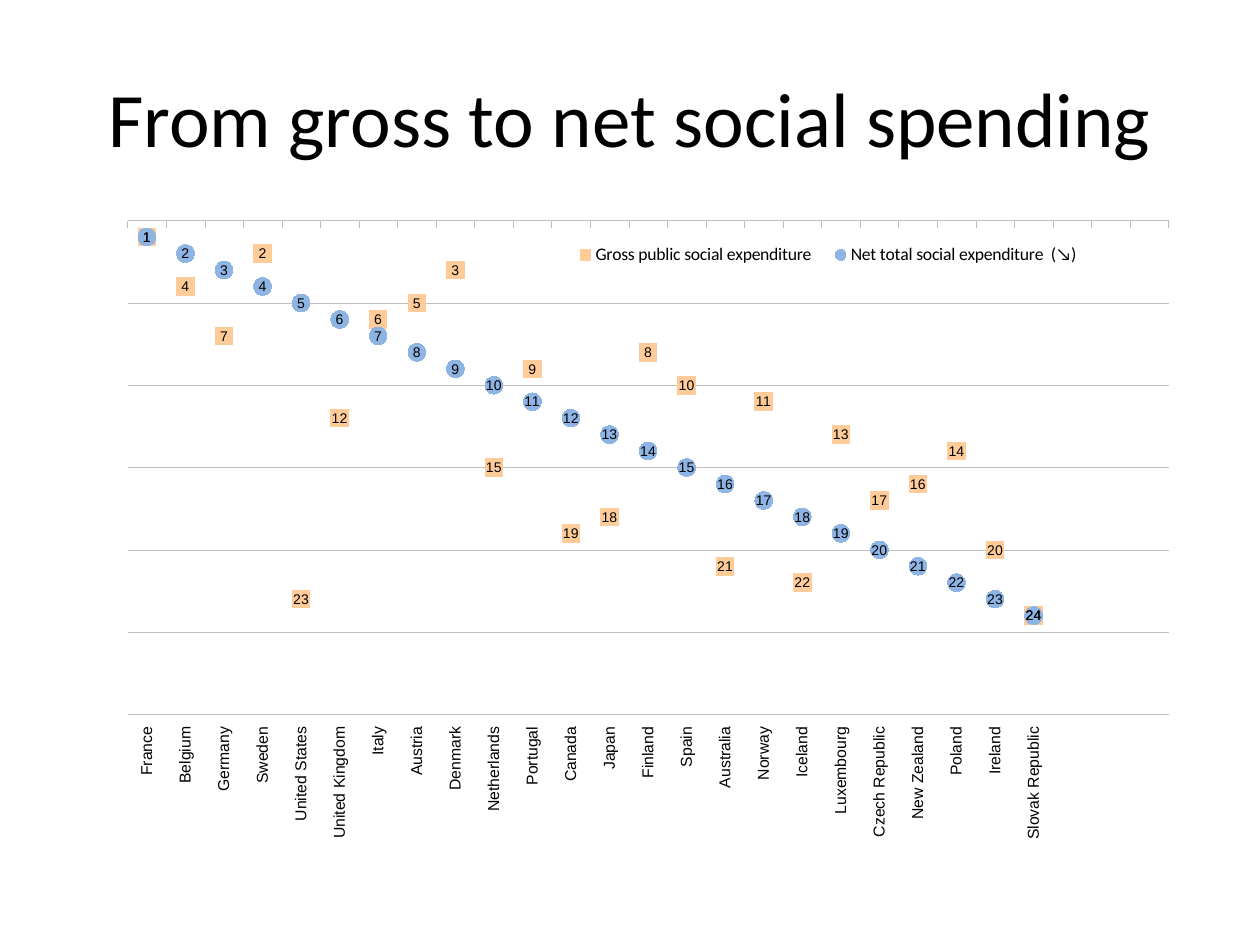
from dataclasses import dataclass

from lxml import etree
from pptx import Presentation
from pptx.chart.data import CategoryChartData
from pptx.dml.color import RGBColor
from pptx.enum.chart import (XL_CHART_TYPE, XL_LABEL_POSITION, XL_LEGEND_POSITION,
                             XL_MARKER_STYLE, XL_TICK_LABEL_POSITION, XL_TICK_MARK)
from pptx.enum.text import MSO_ANCHOR, PP_ALIGN
from pptx.oxml.ns import qn
from pptx.util import Inches, Pt

LINE_MARKERS = XL_CHART_TYPE.LINE_MARKERS
CENTERED = XL_LABEL_POSITION.CENTER
SQUARE, CIRCLE = XL_MARKER_STYLE.SQUARE, XL_MARKER_STYLE.CIRCLE
TICK_INSIDE, TICK_NONE = XL_TICK_MARK.INSIDE, XL_TICK_MARK.NONE

# Content: countries in order of net spending, with their gross rank
TITLE = "From gross to net social spending"
GROSS_RANKS = [
    ("France", 1), ("Belgium", 4), ("Germany", 7), ("Sweden", 2),
    ("United States", 23), ("United Kingdom", 12), ("Italy", 6), ("Austria", 5),
    ("Denmark", 3), ("Netherlands", 15), ("Portugal", 9), ("Canada", 19),
    ("Japan", 18), ("Finland", 8), ("Spain", 10), ("Australia", 21),
    ("Norway", 11), ("Iceland", 22), ("Luxembourg", 13), ("Czech Republic", 17),
    ("New Zealand", 16), ("Poland", 14), ("Ireland", 20), ("Slovak Republic", 24),
]
GROSS_NAME = "Gross public social expenditure"
NET_NAME = "Net total social expenditure  (↘)"
SPARE_COLUMNS = 3
LOWEST_RANK, RANK_STEP = 30, 5


@dataclass(frozen=True)
class Theme:
    text: RGBColor = RGBColor(0, 0, 0)
    rule: RGBColor = RGBColor(0xC0, 0xC0, 0xC0)
    gross: RGBColor = RGBColor(0xFF, 0xCC, 0x99)
    net: RGBColor = RGBColor(0x8E, 0xB4, 0xE3)
    heading_font: str = "Calibri"
    chart_font: str = "Arial"
    title_size: float = 44
    legend_size: float = 10.1
    country_size: float = 9
    rank_size: float = 8
    marker_size: int = 10
    rule_width: float = 0.25


THEME = Theme()

# Layout: inches on the slide, shares of the chart inside it
TITLE_BOX = (0.5, 0.3, 9, 1.25)
CHART_BOX = (0.5, 1.75, 9, 4.95)
PLOT_SHARE = (0.057, 0, 0.918, 0.792)
LEGEND_SHARE = (0.44, 0.02, 0.47, 0.07)


def style_font(font, size, family):
    font.size, font.name = Pt(size), family
    font.color.rgb = THEME.text


def style_rule(line):
    line.color.rgb, line.width = THEME.rule, Pt(THEME.rule_width)


def place_in_chart(part, index, shares, inner=False):
    """Give the plot area or legend a manual position in the chart."""
    for old in part.findall(qn("c:layout")):
        part.remove(old)
    layout = etree.Element(qn("c:layout"))
    manual = etree.SubElement(layout, qn("c:manualLayout"))
    settings = [("layoutTarget", "inner")] if inner else []
    settings += [("xMode", "edge"), ("yMode", "edge")]
    settings += zip("xywh", shares)
    for tag, value in settings:
        etree.SubElement(manual, qn(f"c:{tag}")).set("val", str(value))
    part.insert(index, layout)


def add_title(slide):
    title = slide.shapes.title
    title.left, title.top, title.width, title.height = map(Inches, TITLE_BOX)
    frame = title.text_frame
    frame.text, frame.vertical_anchor = TITLE, MSO_ANCHOR.MIDDLE
    heading = frame.paragraphs[0]
    heading.alignment = PP_ALIGN.CENTER
    style_font(heading.runs[0].font, THEME.title_size, THEME.heading_font)


def style_series(series, marker_style, color):
    series.smooth = False
    series.format.line.fill.background()
    marker = series.marker
    marker.style, marker.size = marker_style, THEME.marker_size
    marker.format.fill.solid()
    marker.format.fill.fore_color.rgb = color
    marker.format.line.fill.background()
    labels = series.data_labels
    labels.show_value, labels.position = True, CENTERED
    style_font(labels.font, THEME.rank_size, THEME.chart_font)


def style_axes(chart):
    countries, ranks = chart.category_axis, chart.value_axis
    countries.major_tick_mark, countries.minor_tick_mark = TICK_INSIDE, TICK_NONE
    countries.tick_label_position = XL_TICK_LABEL_POSITION.HIGH
    style_rule(countries.format.line)
    style_font(countries.tick_labels.font, THEME.country_size, THEME.chart_font)
    # Country names read upwards
    body = countries._element.find(qn("c:txPr")).find(qn("a:bodyPr"))
    body.set("rot", "-5400000")
    body.set("vert", "horz")

    ranks.minimum_scale, ranks.maximum_scale = 0, LOWEST_RANK
    ranks.major_unit, ranks.reverse_order = RANK_STEP, True
    ranks.has_major_gridlines, ranks.visible = True, False
    style_rule(ranks.major_gridlines.format.line)


def add_rank_chart(slide):
    countries, gross = zip(*GROSS_RANKS)
    blanks = [None] * SPARE_COLUMNS
    data = CategoryChartData()
    data.categories = list(countries) + [""] * SPARE_COLUMNS
    data.add_series(GROSS_NAME, list(gross) + blanks)
    data.add_series(NET_NAME, list(range(1, len(countries) + 1)) + blanks)
    chart = slide.shapes.add_chart(LINE_MARKERS, *map(Inches, CHART_BOX), data).chart
    chart.has_title = False
    style_font(chart.font, THEME.rank_size, THEME.chart_font)

    plot = chart.plots[0]
    plot.vary_by_categories = False
    looks = [(SQUARE, THEME.gross), (CIRCLE, THEME.net)]
    for series, look in zip(plot.series, looks):
        style_series(series, *look)
    style_axes(chart)

    # Legend lies over the empty upper right of the plot
    chart.has_legend = True
    legend = chart.legend
    legend.position, legend.include_in_layout = XL_LEGEND_POSITION.RIGHT, False
    style_font(legend.font, THEME.legend_size, THEME.heading_font)
    place_in_chart(legend._element, 1, LEGEND_SHARE)
    plot_area = chart._chartSpace.chart.plotArea
    place_in_chart(plot_area, 0, PLOT_SHARE, inner=True)


def main():
    deck = Presentation()
    deck.slide_width, deck.slide_height = Inches(10), Inches(7.5)
    slide = deck.slides.add_slide(deck.slide_layouts.get_by_name("Title Only"))
    add_title(slide)
    add_rank_chart(slide)
    deck.save("out.pptx")


if __name__ == "__main__":
    main()
